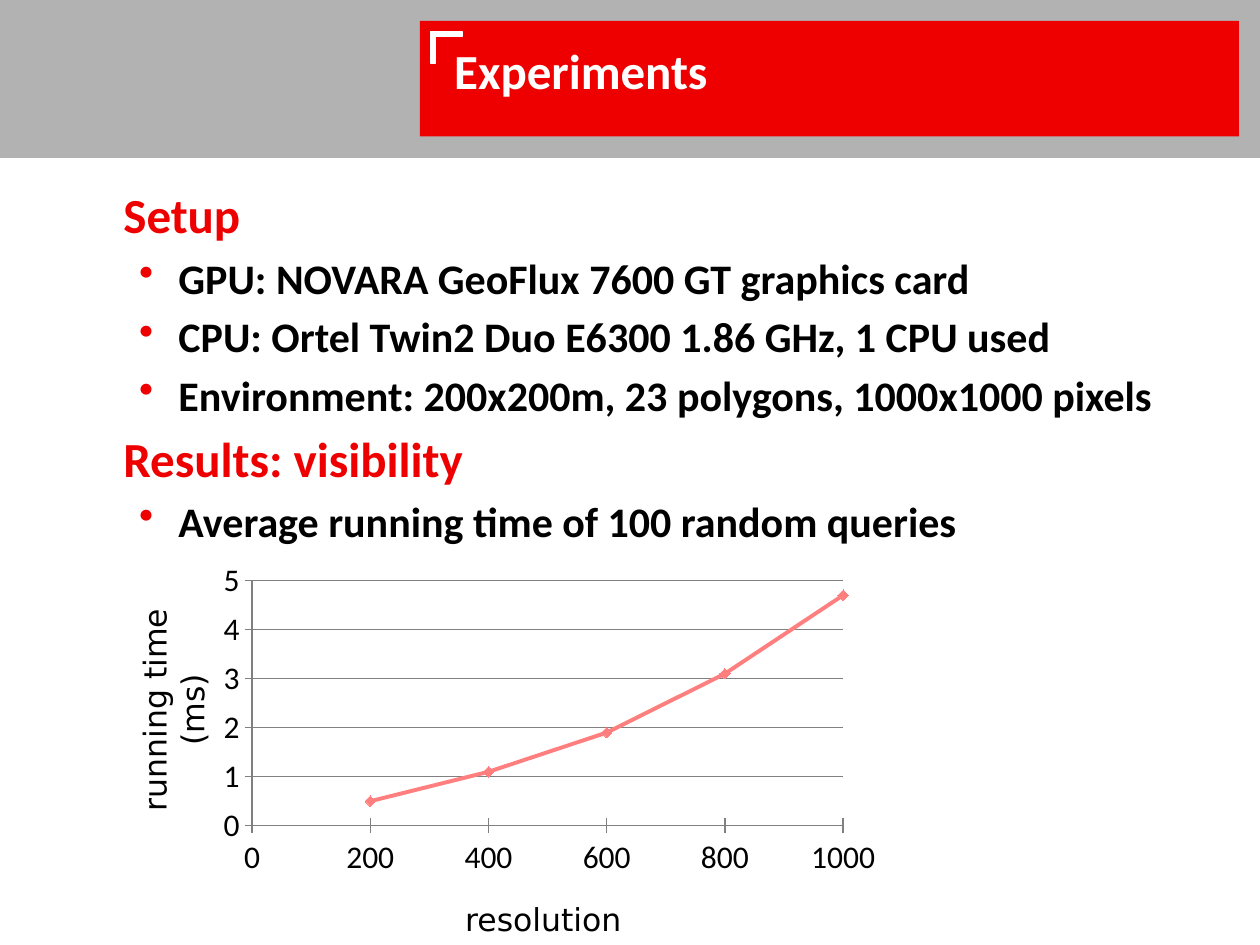
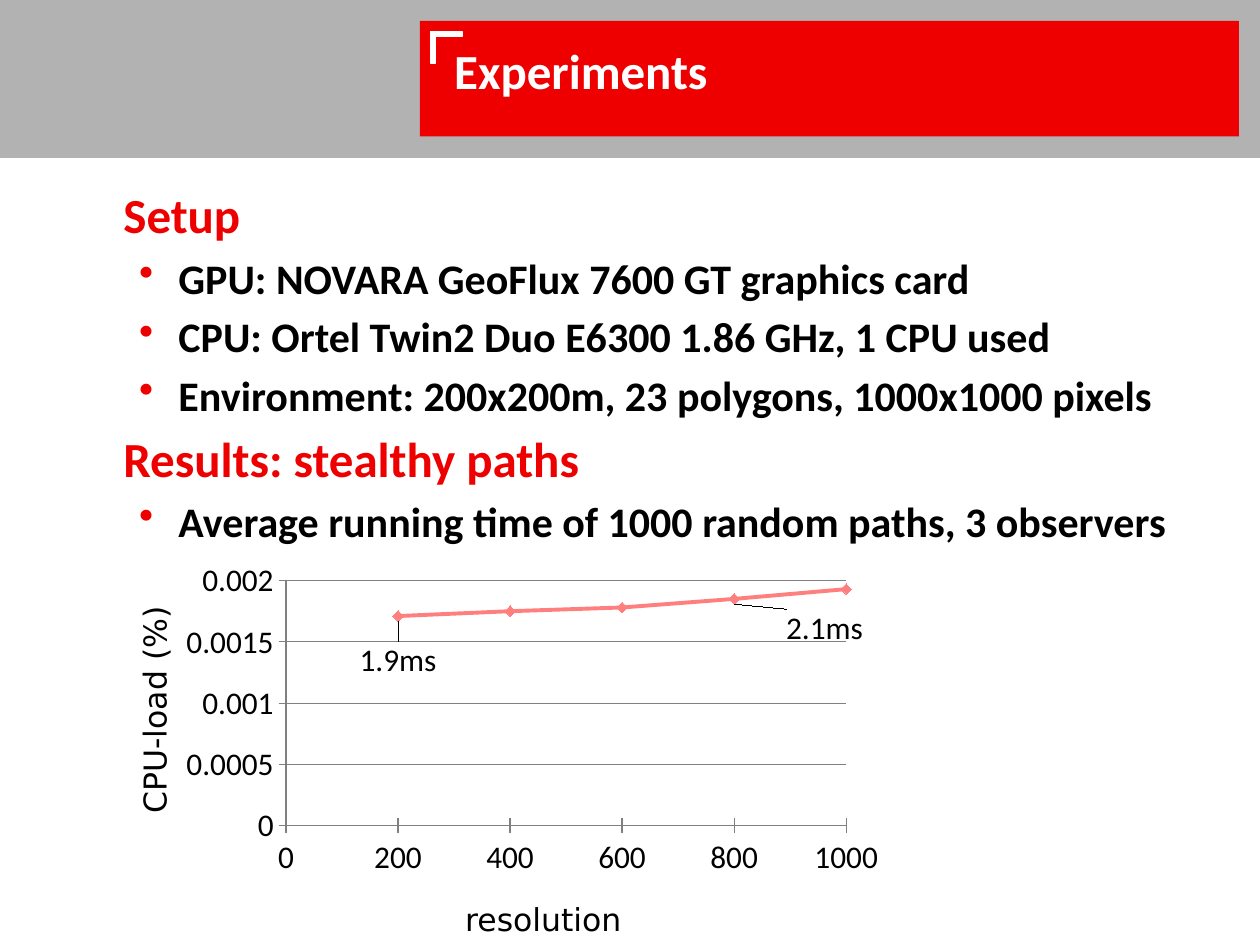
import lxml.etree
import pptx
import pptx.chart.data
import pptx.dml.color
import pptx.enum.chart
import pptx.enum.shapes
import pptx.enum.text
import pptx.oxml.ns
import pptx.util

RGBColor = pptx.dml.color.RGBColor
RED = RGBColor(0xEE, 0x00, 0x00)
GRAY = RGBColor(0xB2, 0xB2, 0xB2)
AXIS_GRAY = RGBColor(0x80, 0x80, 0x80)
CURVE_PINK = RGBColor(0xFF, 0x7F, 0x7F)
WHITE = RGBColor(0xFF, 0xFF, 0xFF)
BLACK = RGBColor(0x00, 0x00, 0x00)

FONT = "Calibri"
AXIS_TITLE_FONT = "DejaVu Sans"
EMU_PER_PX = 9525
SLIDE_SIZE = (960, 720)
INSET = (10, 5)

RESOLUTIONS = (200, 400, 600, 800, 1000)
SETUP = (
    "GPU: NOVARA GeoFlux 7600 GT graphics card",
    "CPU: Ortel Twin2 Duo E6300 1.86 GHz, 1 CPU used",
    "Environment: 200x200m, 23 polygons, 1000x1000 pixels",
)


def px(length):
    return pptx.util.Emu(length * EMU_PER_PX)


def format_font(font, size, color=BLACK, name=FONT, bold=False):
    font.size = pptx.util.Pt(size)
    font.name = name
    font.bold = bold
    font.color.rgb = color


def write(paragraph, text, *, space_before=0, align=None, margin=0,
          bullet_indent=0, **font_format):
    """Put formatted text in a paragraph, with a red bullet if it is indented."""
    properties = paragraph._p.get_or_add_pPr()
    properties.set("marL", str(px(margin)))
    properties.set("indent", str(-px(bullet_indent)))
    paragraph.space_before = pptx.util.Pt(space_before)
    if align is not None:
        paragraph.alignment = align
    if bullet_indent:
        qn = pptx.oxml.ns.qn
        color = lxml.etree.SubElement(properties, qn("a:buClr"))
        lxml.etree.SubElement(color, qn("a:srgbClr"), val=str(RED))
        lxml.etree.SubElement(properties, qn("a:buChar"), char="•")
    run = paragraph.add_run()
    run.text = text
    format_font(run.font, **font_format)


def move_label(label, x, y):
    """Shift a data label by fractions of the chart's size."""
    element = label._get_or_add_dLbl()
    element.insert(1, manual_layout(x=x, y=y))


def manual_layout(**settings):
    qn = pptx.oxml.ns.qn
    layout = lxml.etree.Element(qn("c:layout"))
    manual = lxml.etree.SubElement(layout, qn("c:manualLayout"))
    for name, value in settings.items():
        lxml.etree.SubElement(manual, qn(f"c:{name}"), val=str(value))
    return layout


class Deck:
    def __init__(self):
        self.presentation = pptx.Presentation()
        self.presentation.slide_width, self.presentation.slide_height = map(px, SLIDE_SIZE)
        self.slide = None

    def add_slide(self, title):
        layout = self.presentation.slide_layouts[6]
        self.slide = self.presentation.slides.add_slide(layout)
        # Header band, title panel and corner mark
        self.rectangle(0, 0, 960, 120, GRAY, outlined=True)
        self.rectangle(320, 16, 624, 88, RED)
        self.rectangle(328, 24, 24, 4, WHITE, outlined=True)
        self.rectangle(328, 24, 4, 24, WHITE, outlined=True)
        frame = self.text_box(336, 26, 608, 88)
        write(frame.paragraphs[0], title, size=28, color=WHITE, bold=True)

    def rectangle(self, left, top, width, height, color, outlined=False):
        shape = self.slide.shapes.add_shape(
            pptx.enum.shapes.MSO_SHAPE.RECTANGLE, *map(px, (left, top, width, height)))
        shape.shadow.inherit = False
        shape.fill.solid()
        shape.fill.fore_color.rgb = color
        if outlined:
            shape.line.color.rgb = color
            shape.line.width = pptx.util.Pt(0.75)
        else:
            shape.line.fill.background()

    def text_box(self, left, top, width, height, inset=INSET, rotation=0):
        shape = self.slide.shapes.add_textbox(*map(px, (left, top, width, height)))
        shape.rotation = rotation
        frame = shape.text_frame
        frame.word_wrap = True
        frame.margin_left = frame.margin_right = px(inset[0])
        frame.margin_top = frame.margin_bottom = px(inset[1])
        return frame

    def outline(self, sections):
        """List headings, each with its bullets, in the body area."""
        frame = self.text_box(48, 136, 864, 528)
        paragraph = frame.paragraphs[0]
        space_before = 0
        for heading, bullets in sections:
            if space_before:
                paragraph = frame.add_paragraph()
            write(paragraph, heading, size=28, color=RED, bold=True,
                  margin=36, space_before=space_before)
            space_before = 4.8
            for bullet in bullets:
                write(frame.add_paragraph(), bullet, size=24, bold=True,
                      margin=78, bullet_indent=30, space_before=space_before)

    def axis_title(self, text, center_x, center_y, rotation=0):
        width, height = 216, 38
        frame = self.text_box(center_x - width // 2, center_y - height // 2,
                              width, height, inset=(0, 5), rotation=rotation)
        write(frame.paragraphs[0], text, size=18, name=AXIS_TITLE_FONT,
              align=pptx.enum.text.PP_ALIGN.CENTER)

    def curve(self, values, maximum, step, plot_left, plot_width, labels=()):
        """Plot values by resolution; labels are (point, text, x shift, y shift)."""
        data = pptx.chart.data.XyChartData()
        points = data.add_series("Series 1")
        for resolution, value in zip(RESOLUTIONS, values):
            points.add_data_point(resolution, value)
        chart = self.slide.shapes.add_chart(
            pptx.enum.chart.XL_CHART_TYPE.XY_SCATTER_LINES,
            *map(px, (142, 419, 533, 292)), data).chart
        chart.has_legend = False
        chart.has_title = False
        format_font(chart.font, 18)

        # Plot area and axes
        plot_area = chart._chartSpace.chart.plotArea
        for old_layout in plot_area.findall(pptx.oxml.ns.qn("c:layout")):
            plot_area.remove(old_layout)
        plot_area.insert(0, manual_layout(
            layoutTarget="inner", xMode="edge", yMode="edge",
            x=plot_left, y=0.08, w=plot_width, h=0.64))
        for axis, top, unit in ((chart.category_axis, 1000, 200),
                                (chart.value_axis, maximum, step)):
            axis.minimum_scale, axis.maximum_scale, axis.major_unit = 0, top, unit
            axis.major_tick_mark = pptx.enum.chart.XL_TICK_MARK.CROSS
            axis.minor_tick_mark = pptx.enum.chart.XL_TICK_MARK.NONE
            axis.format.line.color.rgb = AXIS_GRAY
            axis.tick_labels.number_format = "General"
            axis.tick_labels.number_format_is_linked = False
            axis.has_major_gridlines = axis is not chart.category_axis
        chart.category_axis.has_major_gridlines = False
        chart.value_axis.has_major_gridlines = True
        chart.value_axis.major_gridlines.format.line.color.rgb = AXIS_GRAY

        # Curve with diamond markers
        chart.plots[0].vary_by_categories = False
        series = chart.plots[0].series[0]
        series.smooth = False
        series.format.line.color.rgb = CURVE_PINK
        series.format.line.width = pptx.util.Pt(2.25)
        series.marker.style = pptx.enum.chart.XL_MARKER_STYLE.DIAMOND
        series.marker.size = 6
        series.marker.format.fill.solid()
        series.marker.format.fill.fore_color.rgb = CURVE_PINK
        series.marker.format.line.color.rgb = CURVE_PINK

        for index, text, x, y in labels:
            label = series.points[index].data_label
            write(label.text_frame.paragraphs[0], text, size=18)
            label.position = pptx.enum.chart.XL_LABEL_POSITION.BELOW
            move_label(label, x, y)

    def experiment(self, topic, finding, value_title, **curve_format):
        self.add_slide("Experiments")
        self.outline((("Setup", SETUP), (f"Results: {topic}", (finding,))))
        self.curve(**curve_format)
        self.axis_title(value_title, 117, 541, rotation=270)
        self.axis_title("resolution", 414, 700)


def main():
    deck = Deck()
    # Visibility queries
    deck.experiment(
        "visibility", "Average running time of 100 random queries",
        "running time (ms)", values=(0.5, 1.1, 1.9, 3.1, 4.7),
        maximum=5, step=1, plot_left=0.094, plot_width=0.845)
    # Stealthy paths
    deck.experiment(
        "stealthy paths", "Average running time of 1000 random paths, 3 observers",
        "CPU-load (%)", values=(0.00171, 0.00175, 0.00178, 0.00185, 0.00193),
        maximum=0.002, step=0.0005, plot_left=0.137, plot_width=0.806,
        labels=((0, "1.9ms", 0, 0.04), (3, "2.1ms", 0.13, 0)))
    deck.presentation.save("out.pptx")


if __name__ == "__main__":
    main()
